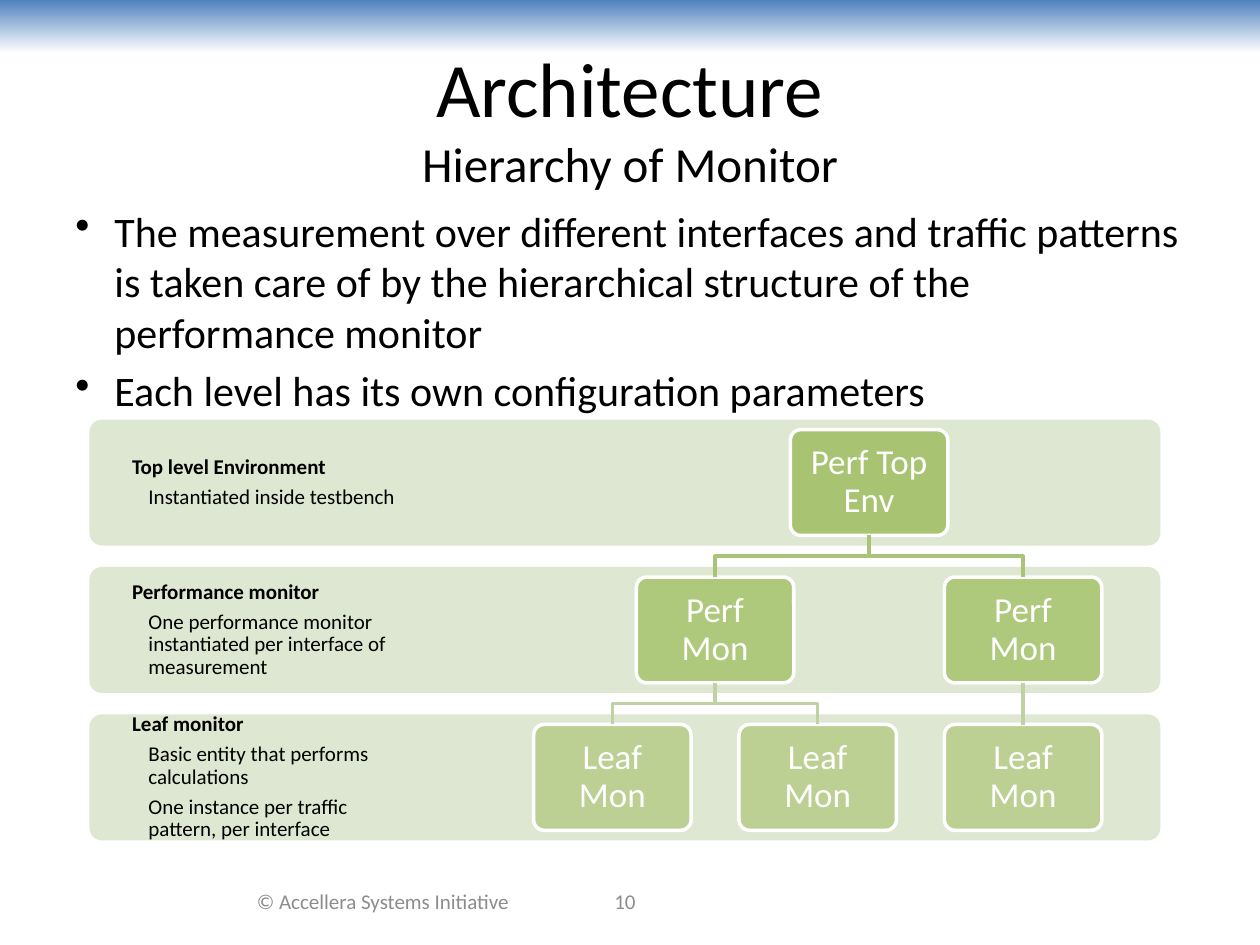
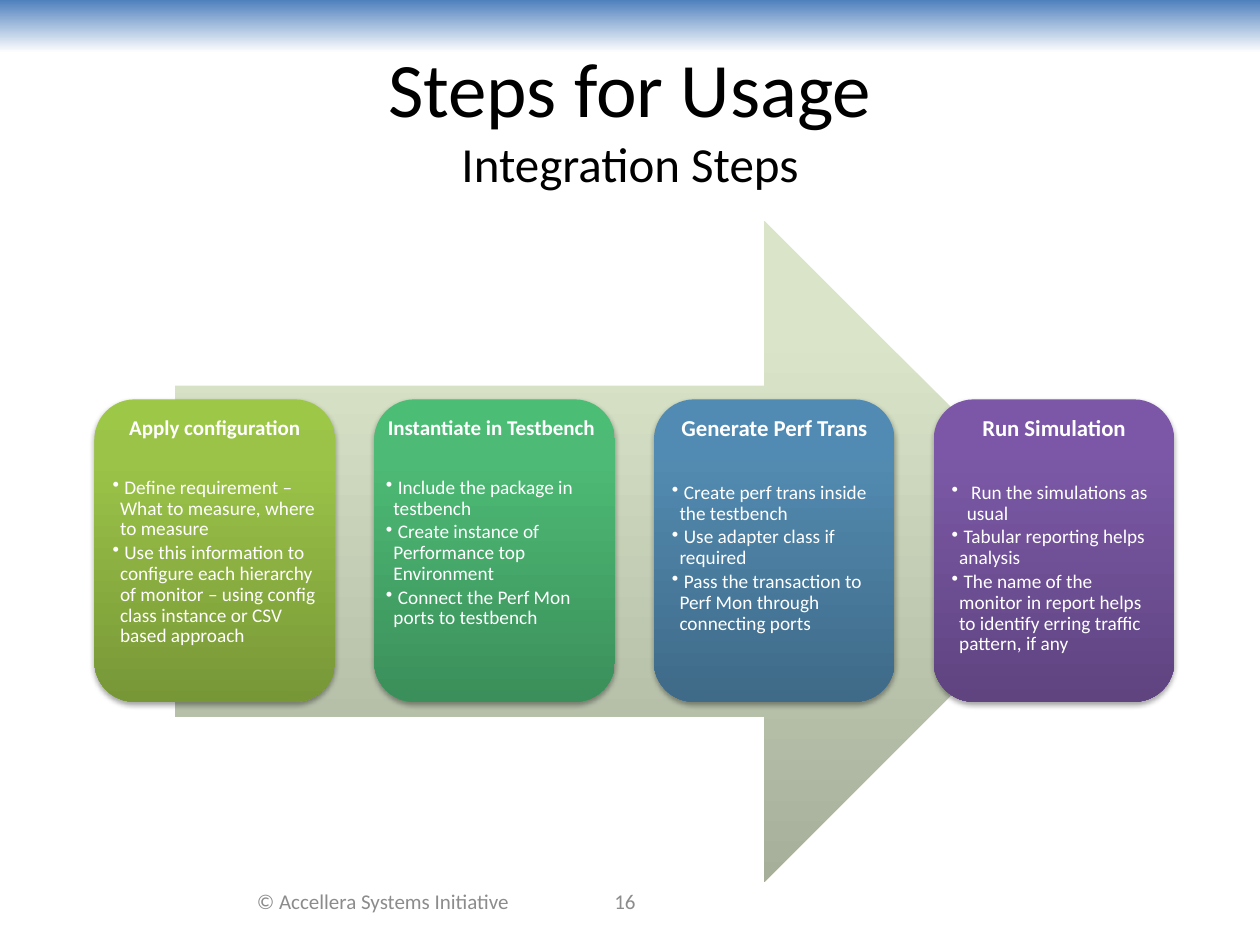
import pptx
import pptx.util
import pptx.dml.color
import pptx.enum.shapes
import pptx.enum.text
import pptx.oxml.ns
from lxml import etree

# ---------- Content ----------
FOOTER = "© Accellera Systems Initiative"

ARCHITECTURE = {
    "title": ("Architecture", "Hierarchy of Monitor"),
    "page": "10",
    "points": [
        "The measurement over different interfaces and traffic patterns is taken care of "
        "by the hierarchical structure of the performance monitor",
        "Each level has its own configuration parameters",
    ],
    # One band per level: heading, then details
    "levels": [
        ("Top level Environment", "Instantiated inside testbench"),
        ("Performance monitor",
         "One performance monitor instantiated per interface of measurement"),
        ("Leaf monitor", "Basic entity that performs calculations",
         "One instance per traffic pattern, per interface"),
    ],
    # Each node: label, column counted in leaves, children
    "tree": ("Perf Top Env", 1.25, [
        ("Perf Mon", 0.5, [("Leaf Mon", 0, []), ("Leaf Mon", 1, [])]),
        ("Perf Mon", 2, [("Leaf Mon", 2, [])]),
    ]),
}

USAGE = {
    "title": ("Steps for Usage", "Integration Steps"),
    "page": "16",
    # Heading, heading size, gradient from top to bottom, insets, steps
    "cards": [
        ("Apply configuration", 12, ("9DC746", "9BC348", "779737"), (0.05, 0.05, 0.05, 0.05), [
            "Define requirement – What to measure, where to measure",
            "Use this information to configure each hierarchy of monitor – using config "
            "class instance or CSV based approach"]),
        ("Instantiate in Testbench", 12, ("4BBD75", "4DBA75", "3B8F5A"), (0, 0.05, 0.05, 0.1), [
            "Include the package in testbench",
            "Create instance of Performance top Environment",
            "Connect the Perf Mon ports to testbench"]),
        ("Generate Perf Trans", 13, ("518BB3", "528AB0", "3F6A88"), (0.05, 0.05, 0.05, 0.05), [
            "Create perf trans inside the testbench",
            "Use adapter class if required",
            "Pass the transaction to Perf Mon through connecting ports"]),
        ("Run Simulation", 13, ("7C57A8", "7B58A6", "5F4480"), (0.05, 0.05, 0.05, 0.05), [
            "Run the simulations as usual",
            "Tabular reporting helps analysis",
            "The name of the monitor in report helps to identify erring traffic pattern, if any"]),
    ],
}

# ---------- Shared style ----------
WIDTH, HEIGHT = 10, 7.5
FONT = "Calibri"
COLORS = {
    "text": "000000", "light": "FFFFFF", "footer": "8C8C8C", "header": "4F81BD",
    "band": "DEE7D1", "node": "9BBB59",
}
ARROW_COLORS = ("D9E4C8", "D8E3C8", "A6AF9A")
NODE_ALPHA = (80, 70, 50)            # by level
LINK_COLORS = ("A9C379", "C0D2A4")   # below each level

# Grid of the hierarchy
BAND_LEFT, BAND_TOP, BAND_WIDTH, BAND_HEIGHT, BAND_PITCH = 0.71, 3.33, 8.5, 1, 1.17
LABEL_WIDTH = 2.55
NODE_WIDTH, NODE_HEIGHT = 1.25, 0.84
LEAF_CENTER, LEAF_PITCH = 4.86, 1.63
# Grid of the cards
CARD_LEFT, CARD_TOP, CARD_WIDTH, CARD_HEIGHT, CARD_PITCH = 0.75, 3.17, 1.91, 2.4, 2.22

SHAPES = pptx.enum.shapes.MSO_SHAPE
ALIGN = pptx.enum.text.PP_ALIGN
ANCHOR = pptx.enum.text.MSO_ANCHOR
inches, points, qn = pptx.util.Inches, pptx.util.Pt, pptx.oxml.ns.qn


def rgb(value):
    return pptx.dml.color.RGBColor.from_string(value)


# ---------- Helpers ----------
def add_shape(slide, kind, left, top, width, height, fill=None, corner=None):
    shape = slide.shapes.add_shape(kind, *map(inches, (left, top, width, height)))
    shape.shadow.inherit = False
    shape.line.fill.background()
    if fill:
        shape.fill.solid()
        shape.fill.fore_color.rgb = rgb(fill)
    if corner:
        shape.adjustments[0] = corner
    return shape


def fill_downwards(shape, stops):
    """Vertical gradient from (position in percent, colour) stops, top first."""
    shape.fill.gradient()
    shape.fill.gradient_angle = 270
    stop_list = shape._element.spPr.find(".//" + qn("a:gsLst"))
    stop_list.clear()
    for position, color in stops:
        stop = etree.SubElement(stop_list, qn("a:gs"), pos=str(position * 1000))
        etree.SubElement(stop, qn("a:srgbClr"), val=color)


def add_drop_shadow(shape):
    effects = shape._element.spPr.find(qn("a:effectLst"))
    shadow = etree.SubElement(effects, qn("a:outerShdw"), blurRad="40000", dist="23000",
                              dir="5400000", rotWithShape="0")
    color = etree.SubElement(shadow, qn("a:srgbClr"), val="000000")
    etree.SubElement(color, qn("a:alpha"), val="35000")


def set_frame(shape, insets=(0.1, 0.05, 0.1, 0.05), anchor=ANCHOR.MIDDLE):
    frame = shape.text_frame
    frame.word_wrap = True
    frame.vertical_anchor = anchor
    (frame.margin_left, frame.margin_top,
     frame.margin_right, frame.margin_bottom) = map(inches, insets)
    return frame


def add_text_box(slide, left, top, width, height, anchor=ANCHOR.MIDDLE):
    box = slide.shapes.add_textbox(*map(inches, (left, top, width, height)))
    return set_frame(box, anchor=anchor)


def write(frame, text, size, color, bold=False, align=ALIGN.LEFT, indent=0, bullet=0,
          spacing=None, before=0, after=0):
    """Fill the first empty paragraph or add one; bullet is the hanging length."""
    first = not frame.text
    paragraph = frame.paragraphs[0] if first else frame.add_paragraph()
    paragraph.text = text
    properties = paragraph._p.get_or_add_pPr()
    properties.set("marL", str(inches(indent)))
    properties.set("indent", str(inches(-bullet)))
    if bullet:
        etree.SubElement(properties, qn("a:buChar"), char="•")
    paragraph.alignment = align
    paragraph.space_before = points(0 if first else before)
    paragraph.space_after = points(after)
    if spacing:
        paragraph.line_spacing = spacing
    for run in paragraph.runs:
        run.font.name = FONT
        run.font.size = points(size)
        run.font.bold = bold
        run.font.color.rgb = rgb(color)
    return paragraph


def add_base_slide(presentation, content):
    """Blank slide with header band, title, footer and page number."""
    slide = presentation.slides.add_slide(presentation.slide_layouts[6])
    header = add_shape(slide, SHAPES.RECTANGLE, 0, 0, WIDTH, 0.42)
    fill_downwards(header, [(0, COLORS["header"]), (100, COLORS["light"])])
    frame = add_text_box(slide, 0.5, 0.3, 9, 1.25)
    title = write(frame, "\v".join(content["title"]), 44, COLORS["text"], align=ALIGN.CENTER)
    title.runs[1].font.size = points(28)
    for text, left, width in ((FOOTER, 1.83, 2.42), (content["page"], 4, 1.92)):
        frame = add_text_box(slide, left, 6.95, width, 0.4)
        write(frame, text, 12, COLORS["footer"], align=ALIGN.CENTER)
    return slide


# ---------- Hierarchy ----------
def add_band(slide, level, heading, details):
    band = add_shape(slide, SHAPES.ROUNDED_RECTANGLE, BAND_LEFT, BAND_TOP + level * BAND_PITCH,
                     BAND_WIDTH, BAND_HEIGHT, COLORS["band"], corner=0.1)
    frame = set_frame(band, (0.06, 0, BAND_WIDTH - LABEL_WIDTH + 0.06, 0))
    write(frame, heading, 12, COLORS["text"], bold=True, indent=0.25, spacing=0.9, after=4.2)
    for detail in details:
        write(frame, detail, 12, COLORS["text"], indent=0.38, spacing=0.9, after=4.2)


def add_link(slide, parent, child, color):
    """Straight connector to a child right below, otherwise a bent line."""
    start_x = parent.left + parent.width // 2
    end_x = child.left + child.width // 2
    start_y, end_y = parent.top + parent.height, child.top
    if start_x == end_x:
        link = slide.shapes.add_connector(pptx.enum.shapes.MSO_CONNECTOR.STRAIGHT,
                                          start_x, start_y, end_x, end_y)
        link.begin_connect(parent, 2)
        link.end_connect(child, 0)
        etree.SubElement(link._element.spPr, qn("a:effectLst"))
    else:
        middle_y = (start_y + end_y) // 2
        builder = slide.shapes.build_freeform(start_x, start_y)
        builder.add_line_segments([(start_x, middle_y), (end_x, middle_y), (end_x, end_y)],
                                  close=False)
        link = builder.convert_to_shape()
        link.fill.background()
        link.shadow.inherit = False
    link.line.color.rgb = rgb(color)
    link.line.width = points(2)


def add_node(slide, node, level=0):
    label, column, children = node
    center = LEAF_CENTER + column * LEAF_PITCH
    top = BAND_TOP + level * BAND_PITCH + (BAND_HEIGHT - NODE_HEIGHT) / 2
    shape = add_shape(slide, SHAPES.ROUNDED_RECTANGLE, center - NODE_WIDTH / 2, top,
                      NODE_WIDTH, NODE_HEIGHT, COLORS["node"], corner=0.1)
    fill_color = shape._element.spPr.find(qn("a:solidFill"))[0]
    etree.SubElement(fill_color, qn("a:alpha"), val=str(NODE_ALPHA[level] * 1000))
    shape.line.color.rgb = rgb(COLORS["light"])
    shape.line.width = points(2)
    write(set_frame(shape, (0.08,) * 4), label, 20, COLORS["light"],
          align=ALIGN.CENTER, spacing=0.9)
    for child in children:
        add_link(slide, shape, add_node(slide, child, level + 1), LINK_COLORS[level])
    return shape


def build_architecture(presentation):
    slide = add_base_slide(presentation, ARCHITECTURE)
    frame = add_text_box(slide, 0.5, 1.58, 9, 1.75, ANCHOR.TOP)
    for point in ARCHITECTURE["points"]:
        write(frame, point, 24, COLORS["text"], indent=0.31, bullet=0.31, before=4.8)
    for level, (heading, *details) in enumerate(ARCHITECTURE["levels"]):
        add_band(slide, level, heading, details)
    add_node(slide, ARCHITECTURE["tree"])


# ---------- Step cards ----------
def build_usage(presentation):
    slide = add_base_slide(presentation, USAGE)
    arrow = add_shape(slide, SHAPES.RIGHT_ARROW, 1.39, 1.75, 7.3, 5.25)
    fill_downwards(arrow, zip((0, 20, 100), ARROW_COLORS))
    for index, (heading, size, colors, insets, steps) in enumerate(USAGE["cards"]):
        card = add_shape(slide, SHAPES.ROUNDED_RECTANGLE, CARD_LEFT + index * CARD_PITCH,
                         CARD_TOP, CARD_WIDTH, CARD_HEIGHT)
        fill_downwards(card, zip((0, 20, 100), colors))
        add_drop_shadow(card)
        frame = set_frame(card, insets, ANCHOR.TOP)
        write(frame, heading, size, COLORS["light"], bold=True, align=ALIGN.CENTER,
              spacing=0.9, after=round(size * 1.8, 1))
        for step in steps:
            hanging = 0.12 if step.startswith("Run") else 0.06
            write(frame, " " + step, 11, COLORS["light"], indent=hanging, bullet=hanging,
                  spacing=0.9, after=1.65)


def main():
    presentation = pptx.Presentation()
    presentation.slide_width, presentation.slide_height = inches(WIDTH), inches(HEIGHT)
    build_architecture(presentation)
    build_usage(presentation)
    presentation.save("out.pptx")


if __name__ == "__main__":
    main()
